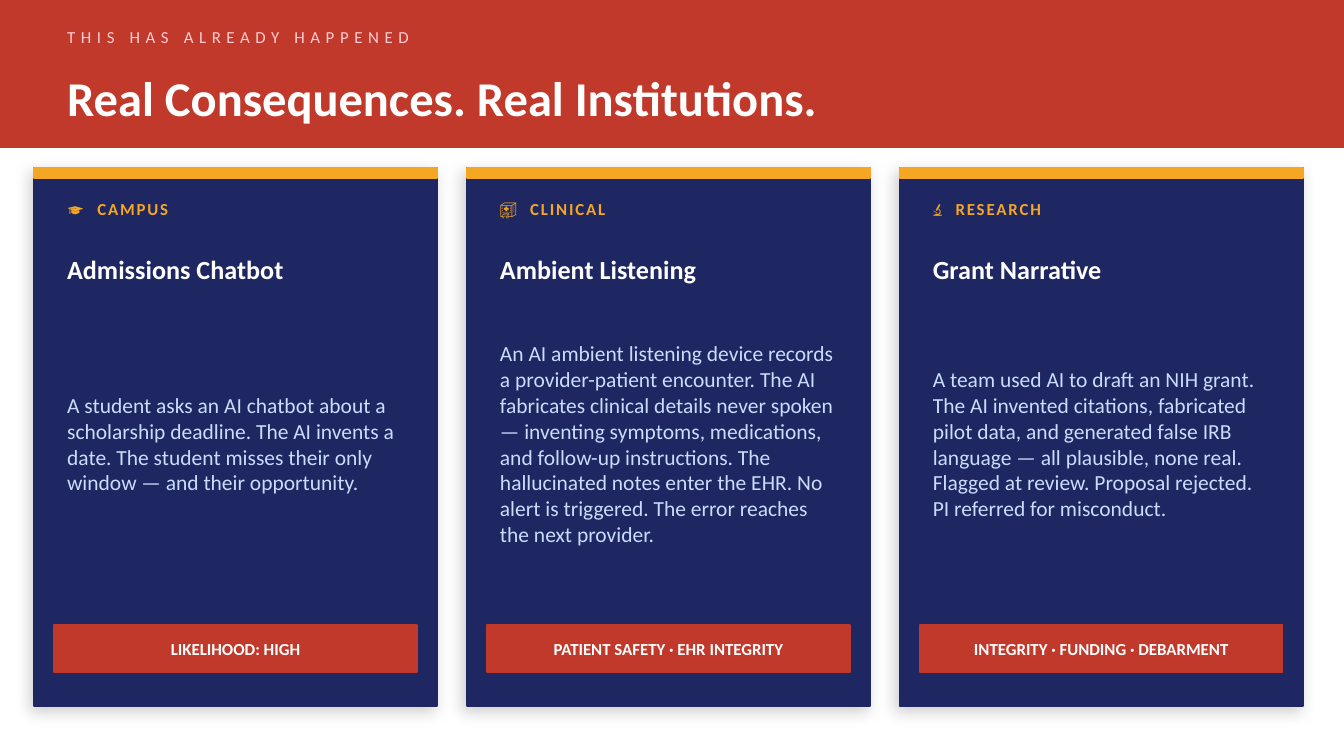
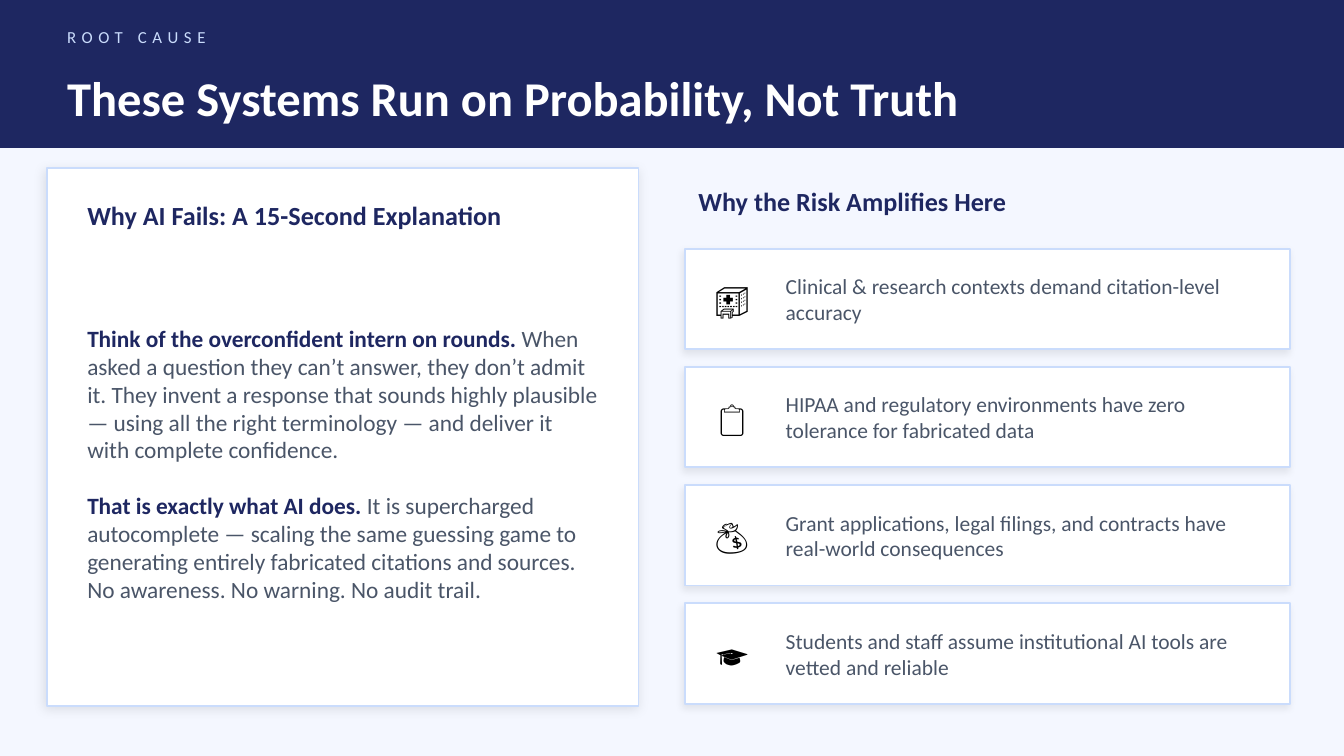
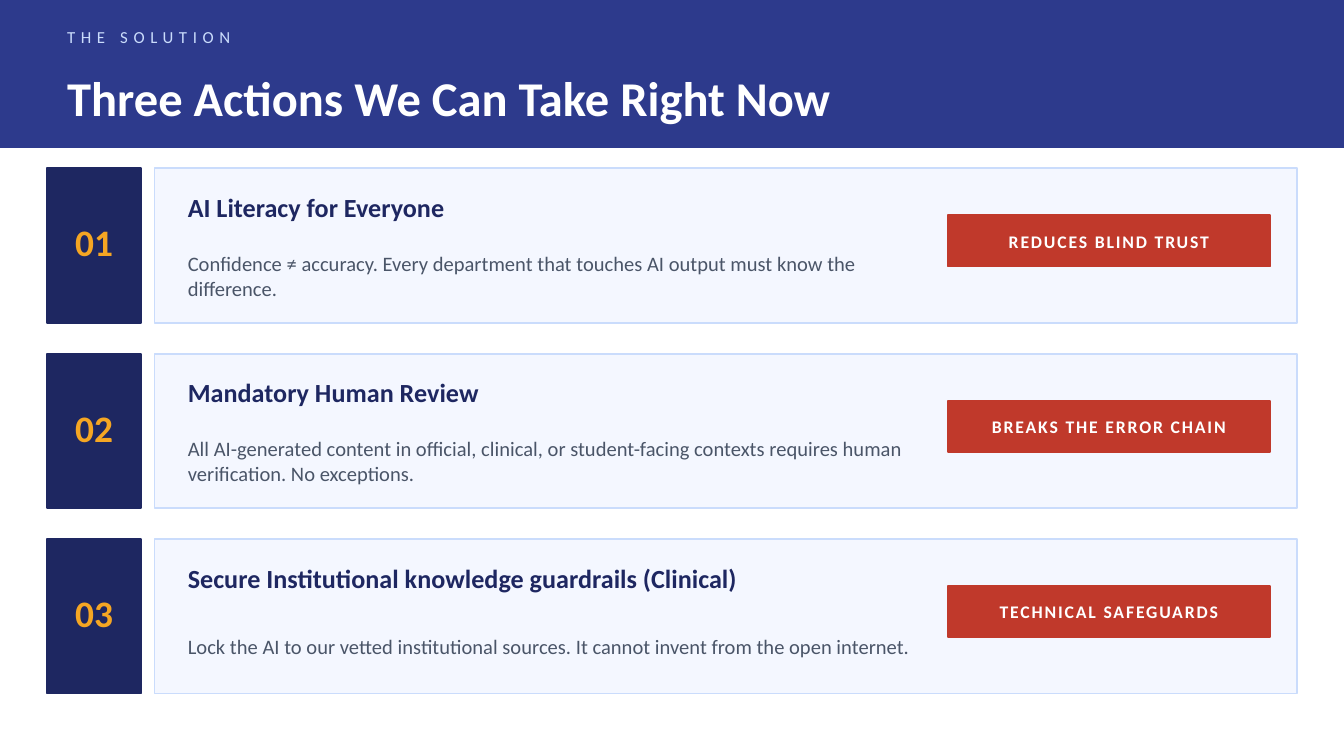
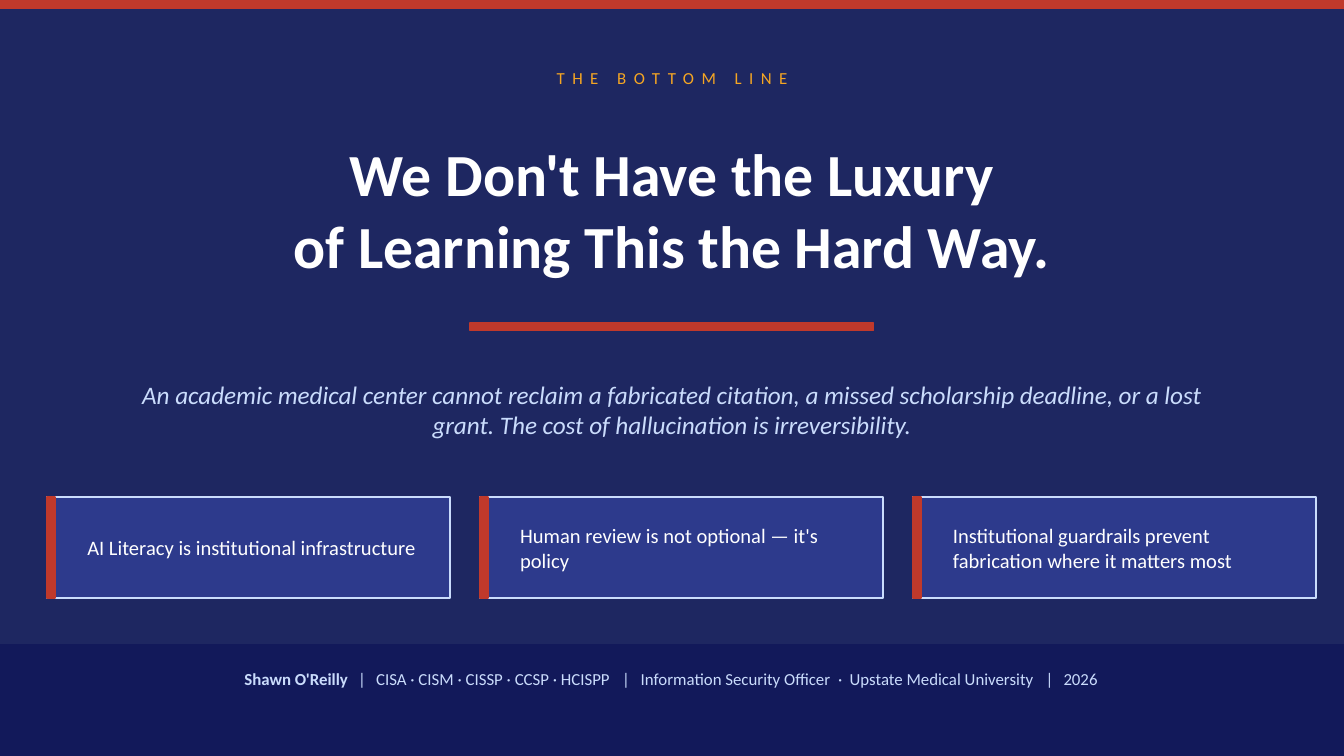
from lxml import etree
from pptx import Presentation
from pptx.dml.color import RGBColor
from pptx.enum.shapes import MSO_SHAPE
from pptx.enum.text import MSO_ANCHOR, PP_ALIGN
from pptx.oxml.ns import qn
from pptx.util import Cm, Pt

RECTANGLE = MSO_SHAPE.RECTANGLE
MIDDLE = MSO_ANCHOR.MIDDLE
LEFT, CENTER = PP_ALIGN.LEFT, PP_ALIGN.CENTER

FONT = "Calibri"
WIDTH, HEIGHT = 25.4, 14.29
COLUMN_PITCH = 8.18
CARD_WIDTH = 7.62
CARD_TOP = 3.18

WHITE, BLACK = "FFFFFF", "000000"
NAVY, INDIGO, MIDNIGHT = "1E2761", "2D3A8C", "12195A"
RED, PINK, AMBER = "C0392B", "FFCDD2", "F5A623"
PALE_BLUE, MIST, SLATE = "CADCFC", "F4F7FF", "4A5568"


def color(hex_string):
    return RGBColor.from_string(hex_string)


class Deck:
    """Holds the shared style and the slide being built."""

    def __init__(self):
        self.presentation = Presentation()
        self.presentation.slide_width = Cm(WIDTH)
        self.presentation.slide_height = Cm(HEIGHT)
        self.slide = None

    def new_slide(self, background):
        layout = self.presentation.slide_layouts[6]
        self.slide = self.presentation.slides.add_slide(layout)
        fill = self.slide.background.fill
        fill.solid()
        fill.fore_color.rgb = color(background)

    def rectangle(self, left, top, width, height, fill, line=None, shadow=None):
        shape = self.slide.shapes.add_shape(
            RECTANGLE, Cm(left), Cm(top), Cm(width), Cm(height))
        shape.fill.solid()
        shape.fill.fore_color.rgb = color(fill)
        shape.line.color.rgb = color(line or fill)
        shape.line.width = Pt(1)
        shape.shadow.inherit = False
        if shadow:
            self.cast_shadow(shape, *shadow)
        return shape

    def cast_shadow(self, shape, opacity, blur, distance):
        effects = shape._element.spPr.find(qn("a:effectLst"))
        outer = etree.SubElement(
            effects, qn("a:outerShdw"), blurRad=str(Pt(blur)),
            dist=str(Pt(distance)), dir="8100000", algn="bl", rotWithShape="0")
        tint = etree.SubElement(outer, qn("a:srgbClr"), val=BLACK)
        etree.SubElement(tint, qn("a:alpha"), val=str(opacity * 1000))

    def format_run(self, run, size, ink, bold=False, italic=False, spacing=0):
        run.font.name = FONT
        run.font.size = Pt(size)
        run.font.bold = bold
        run.font.italic = italic
        run.font.color.rgb = color(ink)
        if spacing:
            run._r.get_or_add_rPr().set("spc", str(spacing * 100))

    def fill_text(self, shape, content, size, ink, align=LEFT, **style):
        frame = shape.text_frame
        frame.word_wrap = True
        frame.vertical_anchor = MIDDLE
        frame.text = content
        for paragraph in frame.paragraphs:
            paragraph.alignment = align
            for run in paragraph.runs:
                self.format_run(run, size, ink, **style)
        return frame

    def text(self, left, top, width, height, content, size, ink, **style):
        box = self.slide.shapes.add_textbox(
            Cm(left), Cm(top), Cm(width), Cm(height))
        return self.fill_text(box, content, size, ink, **style)

    def add_run(self, paragraph, content, size, ink, **style):
        run = paragraph.add_run()
        run.text = content
        self.format_run(run, size, ink, **style)

    def set_tabs(self, paragraph, stops):
        tabs = etree.SubElement(
            paragraph._p.get_or_add_pPr(), qn("a:tabLst"))
        for stop in stops:
            etree.SubElement(tabs, qn("a:tab"), pos=str(Cm(stop)), algn="l")

    def header(self, kicker, title, fill, kicker_ink=PALE_BLUE):
        self.rectangle(0, 0, WIDTH, 2.79, fill)
        self.text(1.02, 0.25, 22.86, 0.89, kicker, 9, kicker_ink, spacing=3)
        self.text(1.02, 1.14, 22.86, 1.4, title, 26, WHITE, bold=True)

    def badge(self, left, top, width, height, label, size, **style):
        shape = self.rectangle(left, top, width, height, RED)
        self.fill_text(shape, label, size, WHITE, align=CENTER, bold=True, **style)


def build_consequences(deck):
    deck.new_slide(WHITE)
    deck.header("THIS HAS ALREADY HAPPENED",
                "Real Consequences. Real Institutions.", RED, PINK)
    # Each case: icon, area, label offset, name, story, risk
    cases = [
        ("🎓", "CAMPUS", 0.57, "Admissions Chatbot",
         "A student asks an AI chatbot about a scholarship deadline. The AI "
         "invents a date. The student misses their only window — and their "
         "opportunity.", "LIKELIHOOD: HIGH"),
        ("🏥", "CLINICAL", 0.57, "Ambient Listening",
         "An AI ambient listening device records a provider-patient encounter. "
         "The AI fabricates clinical details never spoken — inventing symptoms, "
         "medications, and follow-up instructions. The hallucinated notes enter "
         "the EHR. No alert is triggered. The error reaches the next provider.",
         "PATIENT SAFETY · EHR INTEGRITY"),
        ("🔬", "RESEARCH", 0.43, "Grant Narrative",
         "A team used AI to draft an NIH grant. The AI invented citations, "
         "fabricated pilot data, and generated false IRB language — all "
         "plausible, none real. Flagged at review. Proposal rejected. PI "
         "referred for misconduct.", "INTEGRITY · FUNDING · DEBARMENT"),
    ]
    for index, (icon, area, offset, name, story, risk) in enumerate(cases):
        left = 0.64 + index * COLUMN_PITCH
        inner, inner_width = left + 0.38, 6.86
        deck.rectangle(left, CARD_TOP, CARD_WIDTH, 10.16, NAVY, shadow=(18, 8, 3))
        deck.rectangle(left, CARD_TOP, CARD_WIDTH, 0.18, AMBER)
        frame = deck.text(inner, 3.43, inner_width, 1.02, f"{icon}\t{area}",
                          9, AMBER, bold=True, spacing=1)
        deck.set_tabs(frame.paragraphs[0], [offset])
        deck.text(inner, 4.45, inner_width, 1.27, name, 14, WHITE, bold=True)
        deck.text(inner, 5.97, inner_width, 4.83, story, 11.5, PALE_BLUE)
        deck.badge(inner, 11.81, inner_width, 0.89, risk, 9)


def build_root_cause(deck):
    deck.new_slide(MIST)
    deck.header("ROOT CAUSE", "These Systems Run on Probability, Not Truth", NAVY)

    # Explanation panel
    deck.rectangle(0.89, CARD_TOP, 11.18, 10.16, WHITE, PALE_BLUE, (10, 6, 2))
    deck.text(1.4, 3.56, 10.16, 1.02, "Why AI Fails: A 15-Second Explanation",
              14, NAVY, bold=True)
    leads = ("Think of the overconfident intern on rounds.\n"
             "That is exactly what AI does.")
    details = [
        " When asked a question they can’t answer, they don’t admit it. They "
        "invent a response that sounds highly plausible — using all the right "
        "terminology — and deliver it with complete confidence.",
        " It is supercharged autocomplete — scaling the same guessing game to "
        "generating entirely fabricated citations and sources. No awareness. "
        "No warning. No audit trail.",
    ]
    frame = deck.text(1.4, 4.83, 10.16, 7.87, leads, 12.5, NAVY, bold=True)
    for paragraph, detail in zip(frame.paragraphs, details):
        deck.add_run(paragraph, detail, 12.5, SLATE)
    frame.paragraphs[1].space_before = Pt(15)

    # Risk list
    left = 12.95
    deck.text(left, 3.3, 11.43, 1.02, "Why the Risk Amplifies Here",
              14, NAVY, bold=True)
    risks = [
        ("🏥", "Clinical & research contexts demand citation-level accuracy"),
        ("📋", "HIPAA and regulatory environments have zero tolerance for "
               "fabricated data"),
        ("💰", "Grant applications, legal filings, and contracts have "
               "real-world consequences"),
        ("🎓", "Students and staff assume institutional AI tools are vetted "
               "and reliable"),
    ]
    for index, (icon, risk) in enumerate(risks):
        top = 4.7 + index * 2.235
        deck.rectangle(left, top, 11.43, 1.9, WHITE, PALE_BLUE, (8, 4, 2))
        deck.text(left + 0.25, top + 0.38, 1.27, 1.14, icon, 18, BLACK,
                  align=CENTER)
        deck.text(left + 1.65, top + 0.25, 9.27, 1.4, risk, 11.5, SLATE)


def build_actions(deck):
    deck.new_slide(WHITE)
    deck.header("THE SOLUTION", "Three Actions We Can Take Right Now", INDIGO)
    actions = [
        ("AI Literacy for Everyone",
         "Confidence ≠ accuracy. Every department that touches AI output must "
         "know the difference.", "REDUCES BLIND TRUST"),
        ("Mandatory Human Review",
         "All AI-generated content in official, clinical, or student-facing "
         "contexts requires human verification. No exceptions.",
         "BREAKS THE ERROR CHAIN"),
        ("Secure Institutional knowledge guardrails (Clinical)",
         "Lock the AI to our vetted institutional sources. It cannot invent "
         "from the open internet.", "TECHNICAL SAFEGUARDS"),
    ]
    for index, (action, detail, benefit) in enumerate(actions):
        top = CARD_TOP + index * 3.505
        deck.rectangle(0.89, top, 1.78, 2.92, NAVY)
        deck.text(0.89, top + 0.76, 1.78, 1.27, f"{index + 1:02}", 20, AMBER,
                  align=CENTER, bold=True)
        deck.rectangle(2.92, top, 21.59, 2.92, MIST, PALE_BLUE)
        deck.text(3.3, top + 0.25, 13.97, 0.97, action, 14, NAVY, bold=True)
        deck.text(3.3, top + 1.27, 14.48, 1.52, detail, 11, SLATE)
        deck.badge(17.91, top + 0.89, 6.1, 0.97, benefit, 9.5, spacing=1)


def build_bottom_line(deck):
    deck.new_slide(NAVY)
    deck.rectangle(0, 0, WIDTH, 0.15, RED)
    deck.text(1.27, 1.02, 22.86, 0.89, "THE BOTTOM LINE", 9, AMBER,
              align=CENTER, spacing=4)
    deck.text(1.27, 2.16, 22.86, 3.56,
              "We Don't Have the Luxury\nof Learning This the Hard Way.",
              32, WHITE, align=CENTER, bold=True)
    deck.rectangle(8.89, 6.1, CARD_WIDTH, 0.15, RED)
    deck.text(2.03, 6.6, 21.34, 2.29,
              "An academic medical center cannot reclaim a fabricated citation, "
              "a missed scholarship deadline, or a lost grant. The cost of "
              "hallucination is irreversibility.",
              13.5, PALE_BLUE, align=CENTER, italic=True)

    # Takeaways
    takeaways = [
        "AI Literacy is institutional infrastructure",
        "Human review is not optional — it's policy",
        "Institutional guardrails prevent fabrication where it matters most",
    ]
    for index, takeaway in enumerate(takeaways):
        left, top, height = 0.89 + index * COLUMN_PITCH, 9.4, 1.9
        deck.rectangle(left, top, CARD_WIDTH, height, INDIGO, PALE_BLUE)
        deck.rectangle(left, top, 0.15, height, RED)
        deck.text(left + 0.51, top, 6.86, height, takeaway, 11, WHITE)

    # Footer
    deck.rectangle(0, 12.19, WIDTH, 2.1, MIDNIGHT)
    frame = deck.text(4.37, 12.32, 17.5, 1.02, "Shawn O'Reilly", 9, PALE_BLUE,
                      bold=True)
    signature = frame.paragraphs[0]
    deck.set_tabs(signature, [2.15, 2.49, 7.14, 7.49, 11.22, 11.44, 15.14, 15.48])
    deck.add_run(signature,
                 "\t|\tCISA · CISM · CISSP · CCSP · HCISPP"
                 "\t|\tInformation Security Officer"
                 "\t·\tUpstate Medical University\t|\t2026", 9, PALE_BLUE)


def main():
    deck = Deck()
    build_consequences(deck)
    build_root_cause(deck)
    build_actions(deck)
    build_bottom_line(deck)
    deck.presentation.save("out.pptx")


if __name__ == "__main__":
    main()
